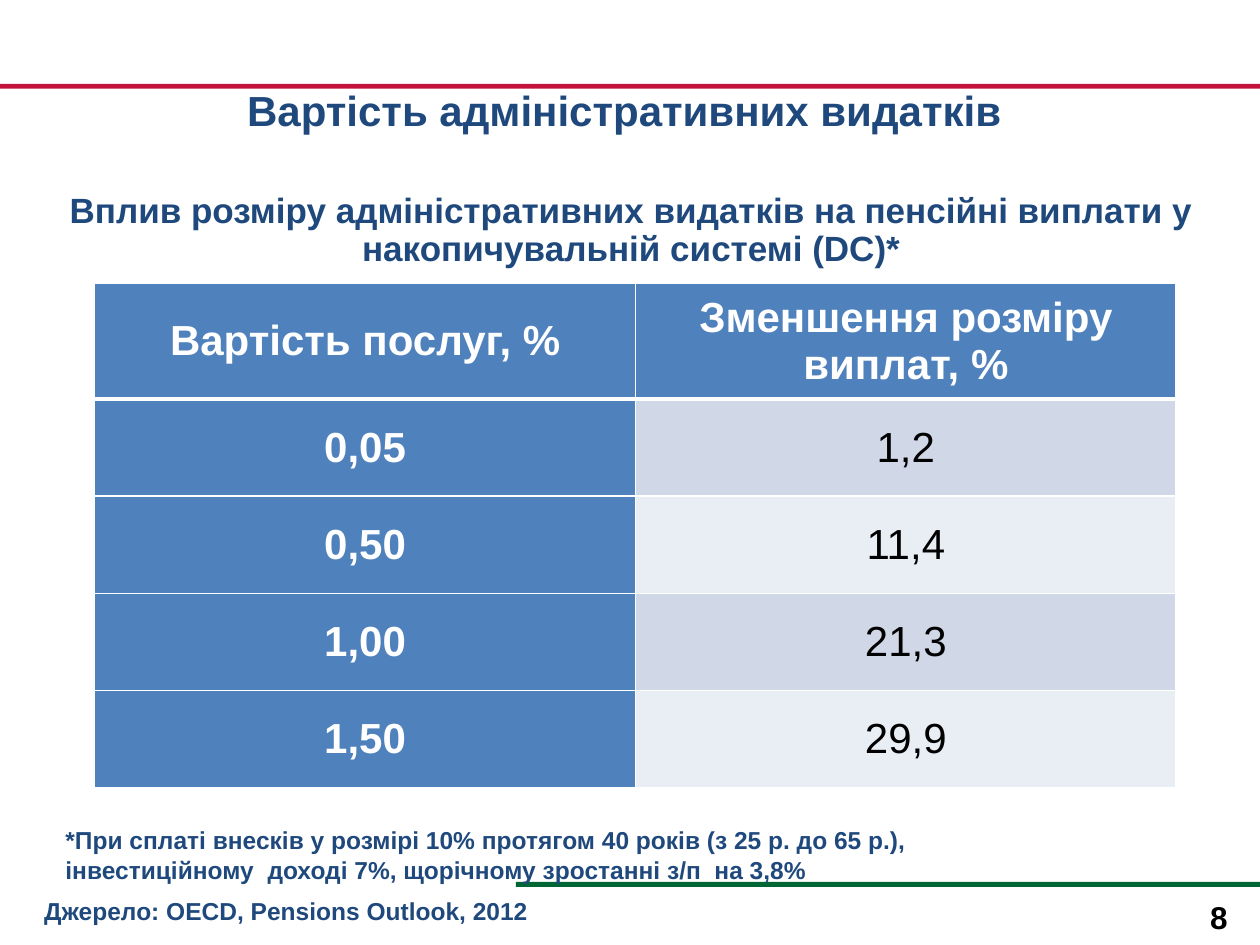
from lxml import etree
from pptx import Presentation
from pptx.dml.color import RGBColor
from pptx.enum.shapes import MSO_SHAPE as Preset
from pptx.enum.text import MSO_ANCHOR as Anchor, PP_ALIGN as Align
from pptx.oxml.ns import qn
from pptx.util import Cm, Pt

COLORS = {
    "red": "C2113A", "green": "006633", "navy": "1F497D", "blue": "4F81BD",
    "odd": "D0D8E8", "even": "E9EDF4", "white": "FFFFFF", "black": "000000",
}


def write(frame, text, size, color, align=Align.LEFT, bold=True, spacing=None):
    frame.word_wrap = True
    paragraph = frame.paragraphs[0]
    paragraph.alignment = align
    paragraph.line_spacing = spacing
    run = paragraph.add_run()
    run.text = text
    run.font.name = "Arial"
    run.font.size = Pt(size)
    run.font.bold = bold
    run.font.color.rgb = RGBColor.from_string(COLORS[color])


def add_border(cell, side, width):
    line = etree.SubElement(cell._tc.get_or_add_tcPr(), qn(f"a:ln{side}"), w=str(Pt(width)))
    fill = etree.SubElement(line, qn("a:solidFill"))
    etree.SubElement(fill, qn("a:srgbClr"), val=COLORS["white"])


presentation = Presentation()
presentation.slide_width, presentation.slide_height = Cm(25.4), Cm(19.05)
slide = presentation.slides.add_slide(presentation.slide_layouts[5])

# Coloured bars
for left, top, width, color in [(0, 1.69, 25.4, "red"), (10.4, 17.78, 15, "green")]:
    bar = slide.shapes.add_shape(Preset.RECTANGLE, Cm(left), Cm(top), Cm(width), Cm(0.1))
    bar.shadow.inherit = False
    bar.fill.solid()
    bar.fill.fore_color.rgb = RGBColor.from_string(COLORS[color])
    bar.line.fill.background()

# Title
title = slide.shapes.title
title.left, title.top, title.width, title.height = Cm(0.43), Cm(3.81), Cm(24.59), Cm(1.7)
title.text_frame.vertical_anchor = Anchor.MIDDLE
write(title.text_frame,
      "Вплив розміру адміністративних видатків на пенсійні виплати у "
      "накопичувальній системі (DC)*",
      20, "navy", Align.CENTER, spacing=0.9)

# Table of costs and benefit reductions
rows = [
    ("Вартість послуг, %", "Зменшення розміру виплат, %"),
    ("0,05", "1,2"),
    ("0,50", "11,4"),
    ("1,00", "21,3"),
    ("1,50", "29,9"),
]
table = slide.shapes.add_table(len(rows), 2, Cm(1.91), Cm(5.72), Cm(21.8), Cm(10.16)).table
for column in table.columns:
    column.width = Cm(10.9)
for row_index, values in enumerate(rows):
    table.rows[row_index].height = Cm(1.96 if row_index else 2.32)
    for column_index, value in enumerate(values):
        cell = table.cell(row_index, column_index)
        is_header = row_index == 0 or column_index == 0
        band = "odd" if row_index % 2 else "even"
        for side in "LRTB":
            thick = (row_index, side) in [(0, "B"), (1, "T")]
            add_border(cell, side, 3 if thick else 1)
        cell.fill.solid()
        cell.fill.fore_color.rgb = RGBColor.from_string(COLORS["blue" if is_header else band])
        cell.vertical_anchor = Anchor.MIDDLE
        cell.margin_left = cell.margin_right = Cm(0.18)
        cell.margin_top = cell.margin_bottom = 0
        write(cell.text_frame, value, 24, "white" if is_header else "black",
              Align.CENTER, bold=is_header)

# Page number, source, heading and footnote
texts = [
    (23.7, 17.98, 1.3, 0.84, "8", 18, "black", Align.RIGHT, None),
    (0.64, 17.93, 17.15, 0.91, "Джерело: ОЕСD, Pensions Outlook, 2012",
     14, "navy", Align.LEFT, None),
    (1.47, 1.7, 22.23, 1.7, "Вартість адміністративних видатків",
     24, "navy", Align.CENTER, 0.9),
    (1.07, 16.51, 21.16, 1.42,
     "*При сплаті внесків у розмірі 10% протягом 40 років (з 25 р. до 65 р.), "
     "інвестиційному  доході 7%, щорічному зростанні з/п  на 3,8%",
     14, "navy", Align.LEFT, None),
]
for left, top, width, height, text, size, color, align, spacing in texts:
    box = slide.shapes.add_textbox(Cm(left), Cm(top), Cm(width), Cm(height))
    write(box.text_frame, text, size, color, align, spacing=spacing)

presentation.save("out.pptx")
